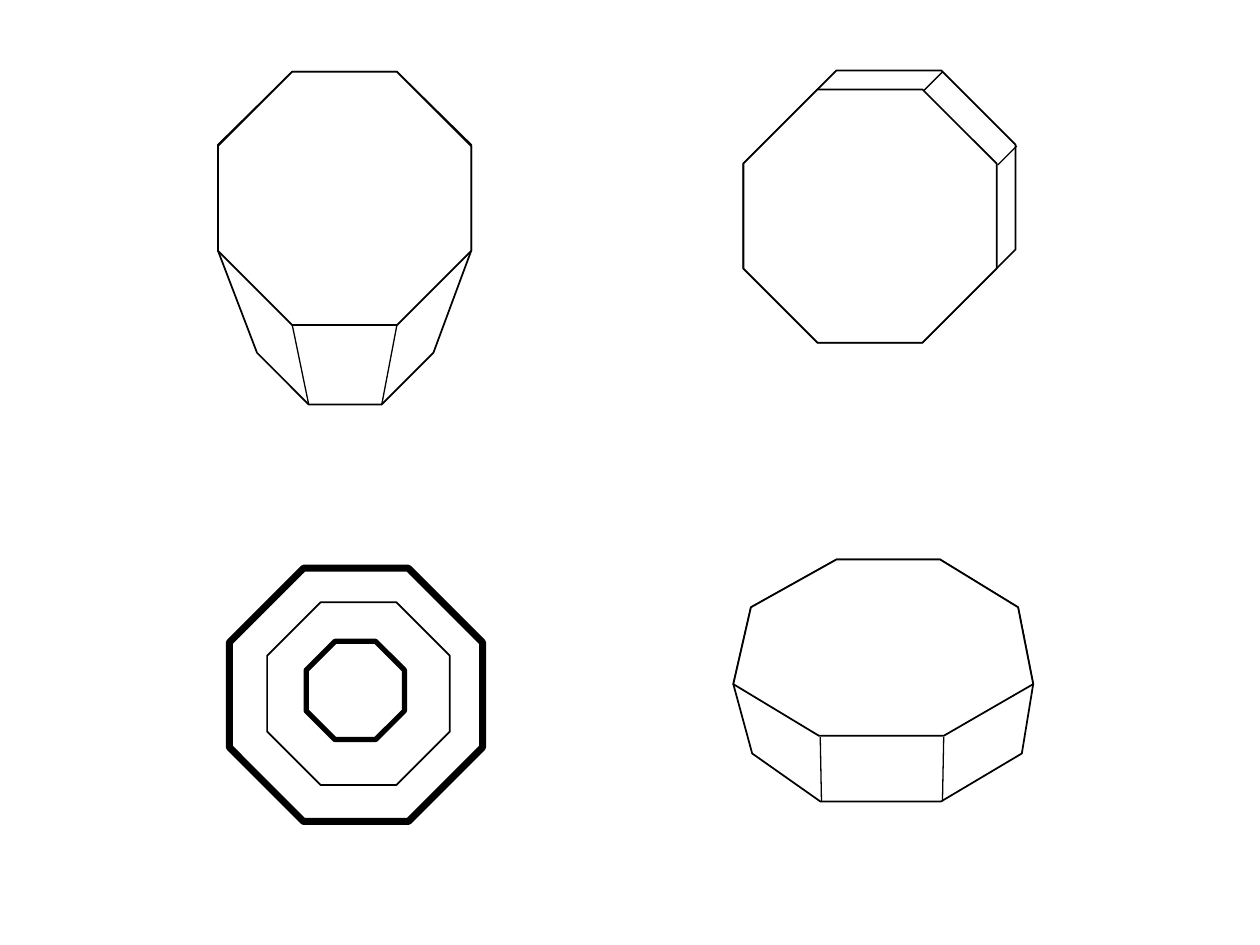
from math import sqrt

from lxml.etree import SubElement
from pptx import Presentation
from pptx.dml.color import RGBColor
from pptx.enum.shapes import MSO_CONNECTOR
from pptx.oxml.ns import qn
from pptx.util import Inches, Pt

BLACK = RGBColor(0x00, 0x00, 0x00)
WHITE = RGBColor(0xFF, 0xFF, 0xFF)
OUTLINE, EDGE = 1, 0.75  # line widths in points


class Drawing:
    """A group whose parts are placed in inches from its left top corner."""

    def __init__(self, page, left, top):
        self.shapes = page.shapes.add_group_shape().shapes
        self.left, self.top = left, top

    def place(self, point):
        x, y = point
        return Inches(self.left + x), Inches(self.top + y)

    def polygon(self, points, weight=OUTLINE, filled=True):
        start, *others = [self.place(point) for point in points]
        builder = self.shapes.build_freeform(*start)
        builder.add_line_segments(others, close=True)
        shape = builder.convert_to_shape()
        shape.shadow.inherit = False
        if filled:
            shape.fill.solid()
            shape.fill.fore_color.rgb = WHITE
        else:
            shape.fill.background()
        shape.line.color.rgb = BLACK
        shape.line.width = Pt(weight)

    def octagon(self, x, y, size, weight=OUTLINE, filled=True):
        cut = size / (2 + sqrt(2))  # corner of a regular octagon
        near, far = cut, size - cut
        corners = [(near, 0), (far, 0), (size, near), (size, far),
                   (far, size), (near, size), (0, far), (0, near)]
        self.polygon([(x + dx, y + dy) for dx, dy in corners], weight, filled)

    def edge(self, start, end):
        line = self.shapes.add_connector(
            MSO_CONNECTOR.STRAIGHT, *self.place(start), *self.place(end))
        line.line.color.rgb = BLACK
        line.line.width = Pt(EDGE)
        SubElement(line._element.spPr, qn("a:effectLst"))


def add_tapered_prism(page, left, top):
    drawing = Drawing(page, left, top)
    # Tapering body, then the top face over it
    drawing.polygon([(0.59, 0), (1.42, 0), (2.01, 0.58), (2.01, 1.42),
                     (1.71, 2.23), (1.3, 2.64), (0.72, 2.64), (0.31, 2.23),
                     (0, 1.42), (0, 0.58)])
    drawing.octagon(0, 0, 2.01)
    drawing.edge((0.59, 2.01), (0.72, 2.64))
    drawing.edge((1.42, 2.01), (1.3, 2.64))


def add_shallow_prism(page, left, top):
    drawing = Drawing(page, left, top)
    size, depth = 2.01, 0.15
    cut = size / (2 + sqrt(2))
    far = size - cut
    # Body swept up and to the right, then the front face
    drawing.polygon([(cut, size + depth), (0, far + depth), (0, cut + depth),
                     (cut + depth, 0), (far + depth, 0), (size + depth, cut),
                     (size + depth, far), (far, size + depth)])
    drawing.octagon(0, depth, size)
    for x, y in [(far, 0), (size, cut)]:
        drawing.edge((x + 0.01, y + depth + 0.01), (x + depth + 0.01, y + 0.01))


def add_rings(page, left, top):
    drawing = Drawing(page, left, top)
    for x, y, size, weight in [(0, 0, 2.01, 4), (0.3, 0.27, 1.45, 1),
                               (0.61, 0.58, 0.78, 3)]:
        drawing.octagon(x, y, size, weight, filled=False)


def add_tilted_prism(page, left, top):
    drawing = Drawing(page, left, top)
    rim = [(0, 0.99), (0.14, 0.38), (0.82, 0), (1.64, 0), (2.26, 0.38),
           (2.38, 0.99)]
    # Body and top face share the rear rim
    drawing.polygon(rim + [(2.29, 1.54), (1.65, 1.92), (0.69, 1.92),
                           (0.15, 1.54)])
    drawing.polygon(rim + [(1.67, 1.4), (0.68, 1.4)])
    drawing.edge((0.69, 1.41), (0.7, 1.92))
    drawing.edge((1.67, 1.41), (1.66, 1.92))


def main():
    deck = Presentation()
    deck.slide_width, deck.slide_height = Inches(10), Inches(7.5)
    page = deck.slides.add_slide(deck.slide_layouts[6])
    add_shallow_prism(page, 5.9, 0.56)
    add_tapered_prism(page, 1.73, 0.57)
    add_rings(page, 1.82, 4.51)
    add_tilted_prism(page, 5.82, 4.44)
    deck.save("out.pptx")


if __name__ == "__main__":
    main()
